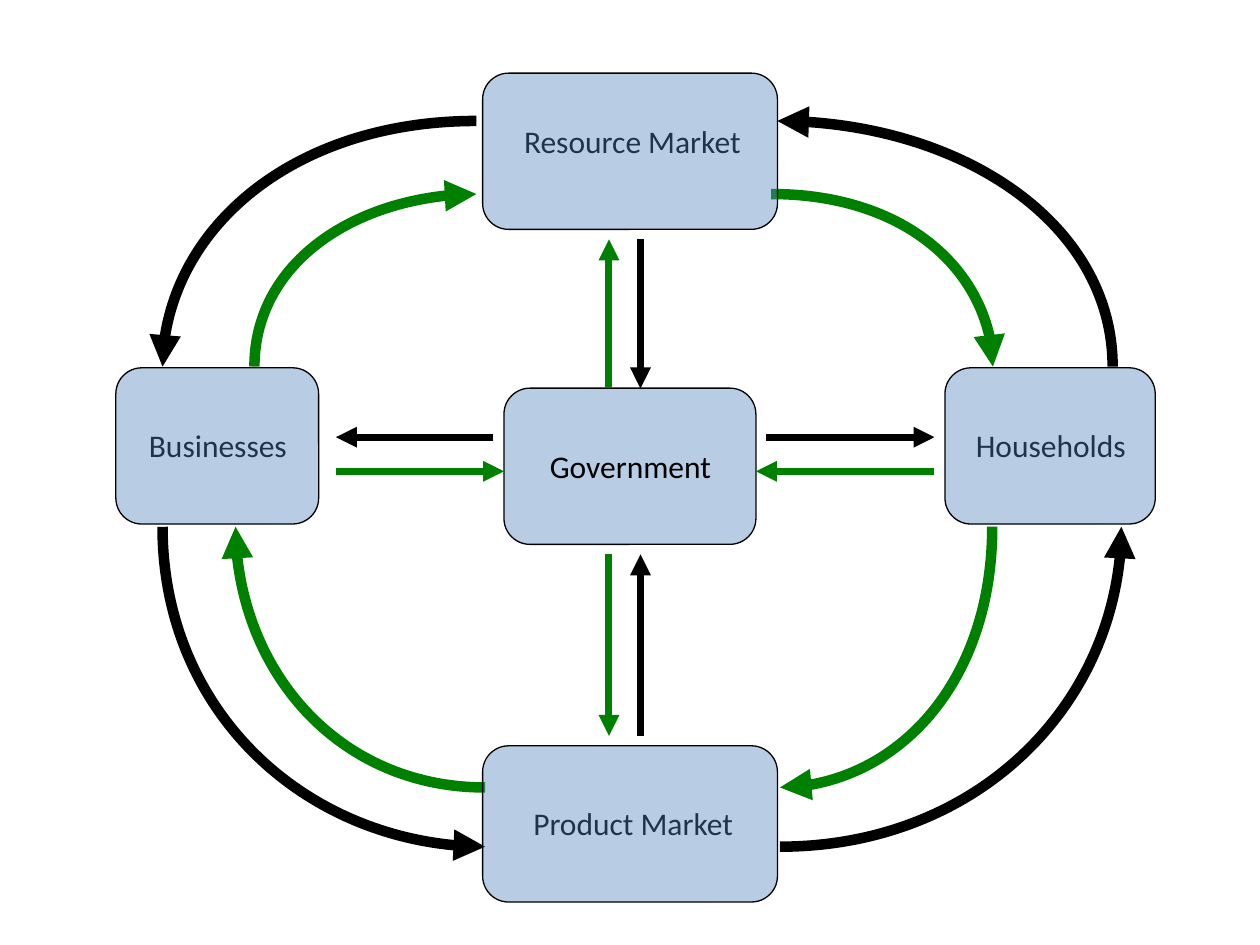
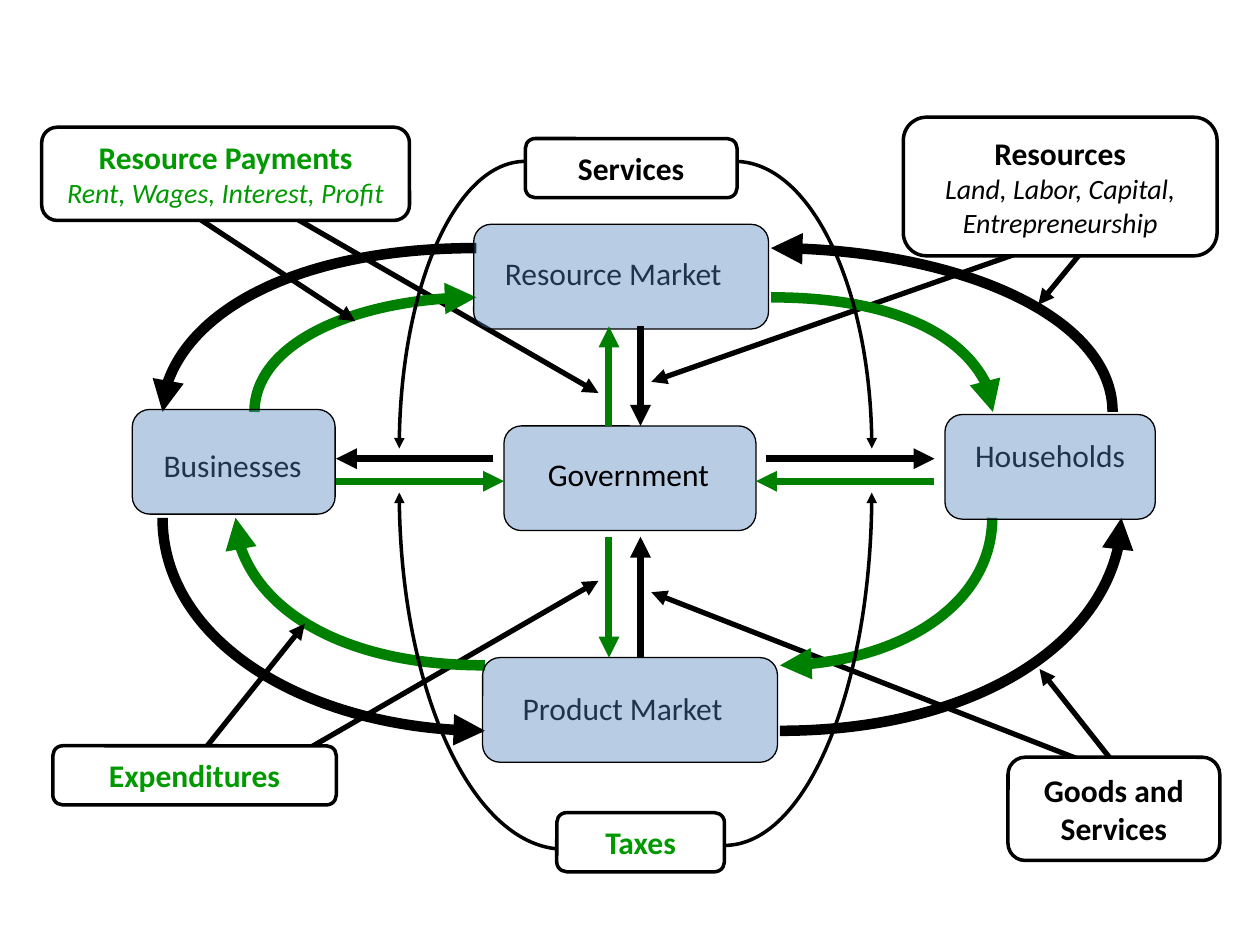
"""Build two circular-flow diagrams of the economy: plain, then labelled."""
from dataclasses import dataclass

from lxml import etree
from pptx import Presentation
from pptx.dml.color import RGBColor as RGB
from pptx.enum.shapes import MSO_CONNECTOR as CON, MSO_SHAPE as SHP
from pptx.enum.text import MSO_ANCHOR as ANC, PP_ALIGN as AL
from pptx.oxml.ns import qn
from pptx.util import Pt


@dataclass
class Theme:
    ink: RGB = RGB(0, 0, 0)
    cash: RGB = RGB(0, 0x80, 0)
    lime: RGB = RGB(0, 0x99, 0)
    blue: RGB = RGB(0x4F, 0x81, 0xBD)
    white: RGB = RGB(255, 255, 255)
    font: str = "Calibri"
    big: float = 18
    small: float = 16
    thick: float = 6
    mid: float = 4
    note: float = 3
    thin: float = 2
    edge: float = 0.75
    bend: float = 0.55


T = Theme()
INK, CASH = T.ink, T.cash


def arrow(page, start, end, color, width, curve=False, tip="tail"):
    """Draw a straight or quarter-round arrow."""
    ends = [Pt(v) for v in (*start, *end)]
    if curve:
        form = page.shapes.build_freeform(*ends[:2], scale=1.0)
        form.add_line_segments([ends[2:]], close=False)
        item = form.convert_to_shape()
        item.fill.background()
        seg = item.element.xpath(".//a:lnTo")[0]
        a, b = [[int(p.get(k)) for k in "xy"] for p in item.element.xpath(".//a:path//a:pt")]
        turn = (b[0], a[1])
        seg.tag = qn("a:cubicBezTo")
        for spot in (b, a):
            x, y = [round(s + T.bend * (t - s)) for s, t in zip(spot, turn)]
            seg.insert(0, etree.Element(qn("a:pt"), x=str(x), y=str(y)))
    else:
        item = page.shapes.add_connector(CON.STRAIGHT, *ends)
    item.line.color.rgb = color
    item.line.width = Pt(width)
    line = item.element.spPr.find(qn("a:ln"))
    etree.SubElement(line, qn(f"a:{tip}End"), type="triangle")
    etree.SubElement(item.element.spPr, qn("a:effectLst"))


def write(shape, rows, align=AL.CENTER, anchor=ANC.TOP):
    """Fill a shape with rows of text, colour and font format."""
    frame = shape.text_frame
    frame.word_wrap = True
    frame.vertical_anchor = anchor
    for i, (text, color, form) in enumerate(rows):
        para = frame.paragraphs[0] if i == 0 else frame.add_paragraph()
        para.alignment = align
        run = para.add_run()
        run.text = text
        run.font.color.rgb = color
        for key, val in ({"name": T.font, "size": Pt(T.big)} | form).items():
            setattr(run.font, key, val)


NODES = [
    ("Businesses", 115.9, 105.1),
    ("Resource Market", 168.5, 158.4),
    ("Product Market", 168.5, 147.6),
    ("Households", 120.2, 121),
    ("Government", 144, 120.2),
]
PLANS = [
    dict(
        align=AL.CENTER, tall=89.3, right=444.2,
        top=(69.1, 110.9), bottom=(483.8, 450), sides=(209.5, 301),
        up=(136.8, 222), down=(316.8, 420.5), across=(249.8, 269.3),
        boxes=[(66.2, 210.2), (275.8, 41.8), (275.8, 426.2), (540, 210.2), (288, 221.8)],
        words=[(72, 239.8), (282.2, 66.2), (288, 455.8), (540, 239.8), (300.2, 252)],
        far=[], near=[], loops=[], notes=[],
    ),
    dict(
        align=AL.LEFT, tall=59.8, right=440.6,
        top=(141.8, 169.9), bottom=(417.6, 380.2), sides=(235.4, 295.9),
        up=(186.5, 243.4), down=(306.7, 375.8), across=(262.1, 275),
        boxes=[(75.6, 234), (270.7, 128.2), (275.8, 375.8), (540, 236.9), (288, 243.4)],
        words=[(86.4, 251.3), (281.5, 141.8), (291.6, 390.2), (550.1, 245.5), (306, 256.3)],
        far=[
            ((630, 439.2), (372.2, 338.4)), ((167.8, 432.7), (342, 331.9)),
            ((606.2, 136.1), (372.2, 218.2)), ((156.2, 117.4), (342, 224.6)),
        ],
        near=[
            ((108, 439.2), (174.2, 356.4)), ((102.2, 117.4), (203, 183.6)),
            ((619.9, 141.8), (593.3, 174.2)), ((637.9, 437.8), (594, 382.3)),
        ],
        loops=[
            ((322.6, 485.3), (228.2, 281.5)), ((414, 483.1), (498.2, 281.5)),
            ((300.2, 92.2), (228.2, 256.3)), ((419.8, 92.2), (498.2, 256.3)),
        ],
        notes=[
            ((30.2, 426.2, 162, 33.8), T.lime, "Expenditures", ""),
            ((516.2, 67, 179.3, 79.2), INK, "Resources", "Land, Labor, Capital, Entrepreneurship"),
            ((576, 432.7, 121, 59), INK, "Goods and Services", ""),
            ((23.8, 72.7, 210.2, 53.3), T.lime, "Resource Payments", "Rent, Wages, Interest, Profit"),
            ((318.2, 464.4, 95.8, 33.8), T.lime, "Taxes", ""),
            ((300.2, 79.2, 121, 33.8), INK, "Services", ""),
        ],
    ),
]

deck = Presentation()
deck.slide_width, deck.slide_height = Pt(720), Pt(540)

for plan in PLANS:
    page = deck.slides.add_slide(deck.slide_layouts[6])
    for start, end in plan["far"]:
        arrow(page, start, end, INK, T.note)

    (t1, t2), (b1, b2), (s1, s2) = plan["top"], plan["bottom"], plan["sides"]
    for start, end, color, tip in [
        ((272.2, t1), (92.9, s1), INK, "tail"),
        ((plan["right"], t1), (635.8, s1), INK, "head"),
        ((277.2, b1), (92.9, s2), INK, "head"),
        ((445.7, b1), (640.8, s2), INK, "tail"),
        ((272.2, t2), (145.4, s1), CASH, "head"),
        ((440.6, t2), (567.4, s1), CASH, "tail"),
        ((277.2, b2), (134.6, s2), CASH, "tail"),
        ((445.7, b2), (567, s2), CASH, "head"),
    ]:
        arrow(page, start, end, color, T.thick, True, tip)
    for start, end in plan["near"]:
        arrow(page, start, end, INK, T.note)

    for (name, wide, span), spot, place in zip(NODES, plan["boxes"], plan["words"]):
        area = [Pt(v) for v in (*place, span, 28.8)]
        hub = name == "Government"
        if not hub:
            write(page.shapes.add_textbox(*area), [(name, INK, {})], plan["align"])
        box = page.shapes.add_shape(SHP.ROUNDED_RECTANGLE, *[Pt(v) for v in (*spot, wide, plan["tall"])])
        box.shadow.inherit = False
        box.fill.solid()
        box.fill.fore_color.rgb = T.blue
        tint = box.element.xpath("./p:spPr/a:solidFill/a:srgbClr")[0]
        etree.SubElement(tint, qn("a:alpha"), val="40000")
        box.line.color.rgb = INK
        box.line.width = Pt(T.edge)
        if hub:
            write(page.shapes.add_textbox(*area), [(name, INK, {})], plan["align"])

    (u1, u2), (d1, d2), (a1, a2) = plan["up"], plan["down"], plan["across"]
    for start, end, color in [
        ((366, u1), (366, u2), INK),
        ((348, u2), (348, u1), CASH),
        ((366, d2), (366, d1), INK),
        ((348, d1), (348, d2), CASH),
        ((437.8, a1), (534, a1), INK),
        ((534, a2), (432, a2), CASH),
        ((282, a1), (192, a1), INK),
        ((192, a2), (288, a2), CASH),
    ]:
        arrow(page, start, end, color, T.mid)

    for start, end in plan["loops"]:
        arrow(page, start, end, INK, T.thin, True)
    for area, color, head, more in plan["notes"]:
        note = page.shapes.add_shape(SHP.ROUNDED_RECTANGLE, *[Pt(v) for v in area])
        note.shadow.inherit = False
        note.fill.solid()
        note.fill.fore_color.rgb = T.white
        note.line.color.rgb = INK
        note.line.width = Pt(T.thin)
        rows = [(head, color, {"bold": True})]
        if more:
            rows.append((more, color, {"italic": True, "size": Pt(T.small)}))
        write(note, rows, anchor=ANC.MIDDLE)

deck.save("out.pptx")
